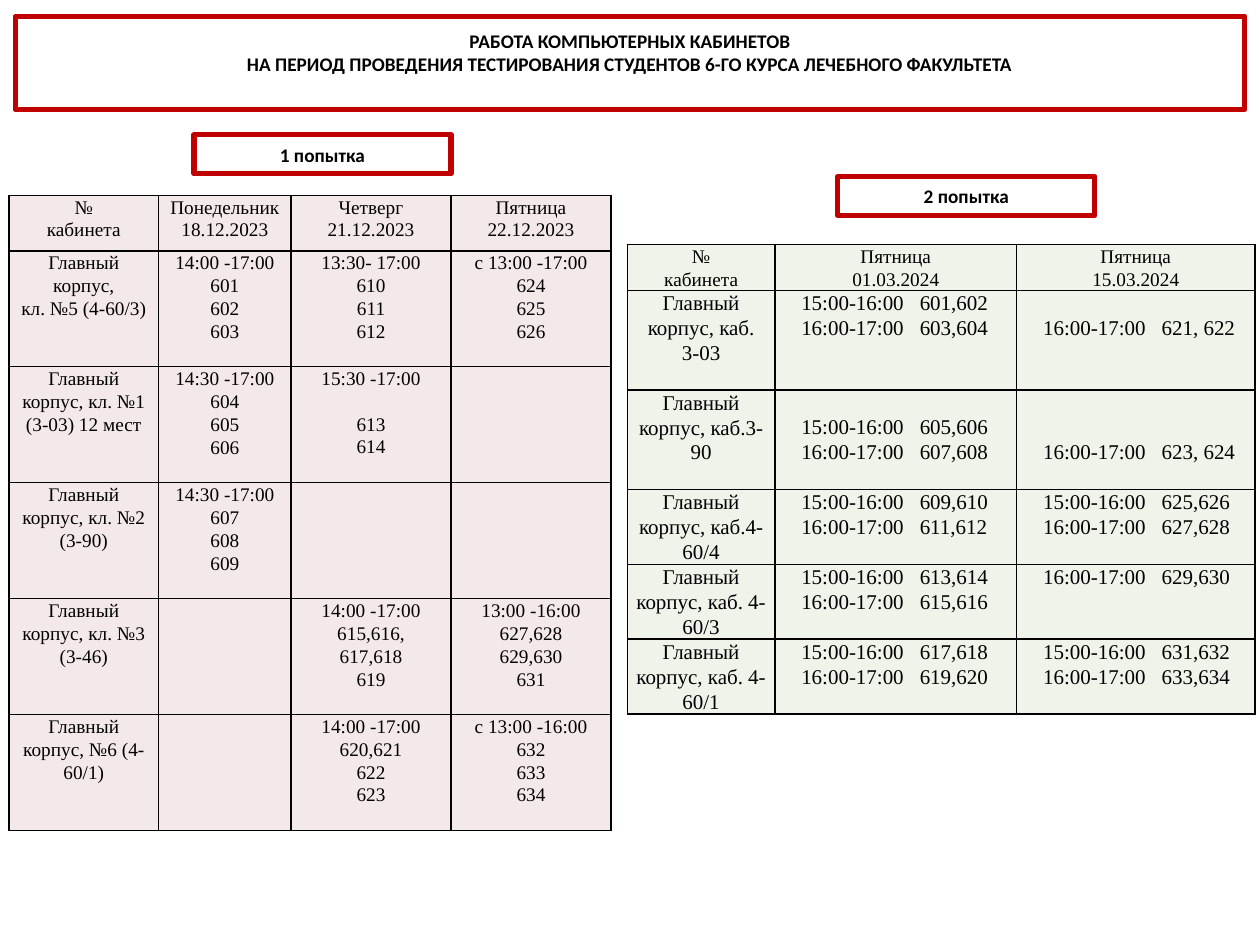
from lxml.etree import SubElement
from pptx import Presentation
from pptx.dml.color import RGBColor as Rgb
from pptx.enum.shapes import MSO_SHAPE as Shape
from pptx.enum.text import MSO_ANCHOR as Anchor, PP_ALIGN as Align
from pptx.oxml import parse_xml
from pptx.oxml.ns import nsdecls, qn
from pptx.util import Emu, Inches, Pt

COLORS = {"frame": "C00000", "text": "000000", "border": "000000",
          "first": "F4E9E9", "second": "EFF3EA"}
WIDTH, HEIGHT = Inches(10), Inches(7.5)
HEADING = {"name": "Calibri", "size": Pt(11), "bold": True}
SMALL = {"name": "Times New Roman", "size": Pt(11)}
LARGE = {"name": "Times New Roman", "size": Pt(12)}
LINE_SPACING = 1.07
LINE_PITCH = 1.18

TITLE = ("РАБОТА КОМПЬЮТЕРНЫХ КАБИНЕТОВ\n"
         "НА ПЕРИОД ПРОВЕДЕНИЯ ТЕСТИРОВАНИЯ СТУДЕНТОВ 6-ГО КУРСА ЛЕЧЕБНОГО ФАКУЛЬТЕТА")
FIRST_ATTEMPT = [
    ["№\nкабинета", "Понедельник\n18.12.2023", "Четверг\n21.12.2023", "Пятница\n22.12.2023"],
    ["Главный корпус,\nкл. №5 (4-60/3)", "14:00 -17:00\n601\n602\n603",
     "13:30- 17:00\n610\n611\n612", "с 13:00 -17:00\n624\n625\n626"],
    ["Главный корпус, кл. №1 (3-03) 12 мест", "14:30 -17:00\n604\n605\n606",
     "15:30 -17:00\n\n613\n614", ""],
    ["Главный корпус, кл. №2 (3-90)", "14:30 -17:00\n607\n608\n609", "", ""],
    ["Главный корпус, кл. №3 (3-46)", "", "14:00 -17:00\n615,616,\n617,618\n619",
     "13:00 -16:00\n627,628\n629,630\n631"],
    ["Главный корпус, №6 (4-60/1)", "", "14:00 -17:00\n620,621\n622\n623",
     "с 13:00 -16:00\n632\n633\n634"],
]
SECOND_ATTEMPT = [
    ["№\nкабинета", "Пятница\n01.03.2024", "Пятница\n15.03.2024"],
    ["Главный корпус, каб.\n3-03", "15:00-16:00\t601,602\n16:00-17:00\t603,604",
     "\n16:00-17:00\t621, 622"],
    ["Главный корпус, каб.3-90", "\n15:00-16:00\t605,606\n16:00-17:00\t607,608",
     "\n\n16:00-17:00\t623, 624"],
    ["Главный корпус, каб.4-60/4", "15:00-16:00\t609,610\n16:00-17:00\t611,612",
     "15:00-16:00\t625,626\n16:00-17:00\t627,628"],
    ["Главный корпус, каб. 4-60/3", "15:00-16:00\t613,614\n16:00-17:00\t615,616",
     "16:00-17:00\t629,630"],
    ["Главный корпус, каб. 4-60/1", "15:00-16:00\t617,618\n16:00-17:00\t619,620",
     "15:00-16:00\t631,632\n16:00-17:00\t633,634"],
]


def across(percent):
    return Emu(round(WIDTH * percent / 100))


def down(percent):
    return Emu(round(HEIGHT * percent / 100))


def apply(target, values):
    for name, value in values.items():
        setattr(target, name, value)


def add_tab_stop(para, position):
    tabs = SubElement(para._p.get_or_add_pPr(), qn("a:tabLst"))
    SubElement(tabs, qn("a:tab"), pos=str(position), algn="l")


def write_paragraph(para, text, font):
    para.text = text
    para.alignment = Align.CENTER
    for span in para.runs:
        apply(span.font, font)
        span.font.color.rgb = Rgb.from_string(COLORS["text"])


def write_lines(frame, text, font):
    for index, line in enumerate(text.split("\n")):
        para = frame.add_paragraph() if index else frame.paragraphs[0]
        write_paragraph(para, line, font)


def frame_box(box, place, text):
    left, top, width, height = place
    apply(box, {"left": across(left), "top": down(top),
                "width": across(width), "height": down(height)})
    box.fill.background()
    box.line.color.rgb = Rgb.from_string(COLORS["frame"])
    box.line.width = Pt(3)
    box.shadow.inherit = False
    apply(box.text_frame, {"word_wrap": True, "vertical_anchor": Anchor.MIDDLE})
    write_lines(box.text_frame, text, HEADING)


def add_label(page, place, text):
    box = page.shapes.add_shape(Shape.RECTANGLE, 0, 0, 0, 0)
    frame_box(box, place, text)


def add_borders(cell):
    properties = cell._tc.get_or_add_tcPr()
    for index, side in enumerate("LRTB"):
        properties.insert(index, parse_xml(
            f'<a:ln{side} {nsdecls("a")} w="{Pt(1)}"><a:solidFill>'
            f'<a:srgbClr val="{COLORS["border"]}"/></a:solidFill></a:ln{side}>'))


def fill_cell(cell, text, font, color):
    apply(cell, {"margin_left": Inches(0.07), "margin_right": Inches(0.07),
                 "margin_top": 0, "margin_bottom": 0})
    cell.fill.solid()
    cell.fill.fore_color.rgb = Rgb.from_string(color)
    add_borders(cell)
    pitch = font["size"] * LINE_PITCH
    body = text.lstrip("\n")
    cell.margin_top = Emu(round(pitch * (len(text) - len(body))))
    if "\t" in body:
        cell.margin_left = across(2.1)
    gap = 0
    para = None
    for line in body.split("\n"):
        if not line:
            gap += pitch
            continue
        para = cell.text_frame.add_paragraph() if para else cell.text_frame.paragraphs[0]
        if "\t" in line:
            add_tab_stop(para, across(9.4))
        write_paragraph(para, line, font)
        para.line_spacing = LINE_SPACING
        if "\t" in line:
            para.alignment = Align.LEFT
        if gap:
            para.space_before = Emu(round(gap))
            gap = 0


def add_schedule(page, corner, columns, rows, content, body_font, color):
    left, top = corner
    table = page.shapes.add_table(len(rows), len(columns), across(left), down(top),
                                  across(sum(columns)), down(sum(rows))).table
    apply(table, {"first_row": False, "horz_banding": False})
    for column, share in zip(table.columns, columns):
        column.width = across(share)
    for index, (row, share) in enumerate(zip(table.rows, rows)):
        row.height = down(share)
        for cell, text in zip(row.cells, content[index]):
            fill_cell(cell, text, body_font if index else SMALL, color)


def main():
    deck = Presentation()
    apply(deck, {"slide_width": WIDTH, "slide_height": HEIGHT})
    page = deck.slides.add_slide(deck.slide_layouts[5])
    title = page.shapes.title
    frame_box(title, (1.2, 1.73, 9.76 * 10, 9.87), TITLE)
    title.text_frame.margin_bottom = down(3)
    add_schedule(page, (0.7, 20.67), [11.9, 10.5, 12.7, 12.7],
                 [5.87] + [12.27] * 5, FIRST_ATTEMPT, SMALL, COLORS["first"])
    add_schedule(page, (49.8, 25.87), [11.7, 19.2, 18.9],
                 [4.87] + [10.53] * 2 + [7.93] * 3, SECOND_ATTEMPT, LARGE, COLORS["second"])
    add_label(page, (15.4, 14.27, 20.4, 4.13), "1 попытка")
    add_label(page, (66.5, 18.67, 20.4, 4.13), "2 попытка")
    deck.save("out.pptx")


if __name__ == "__main__":
    main()
